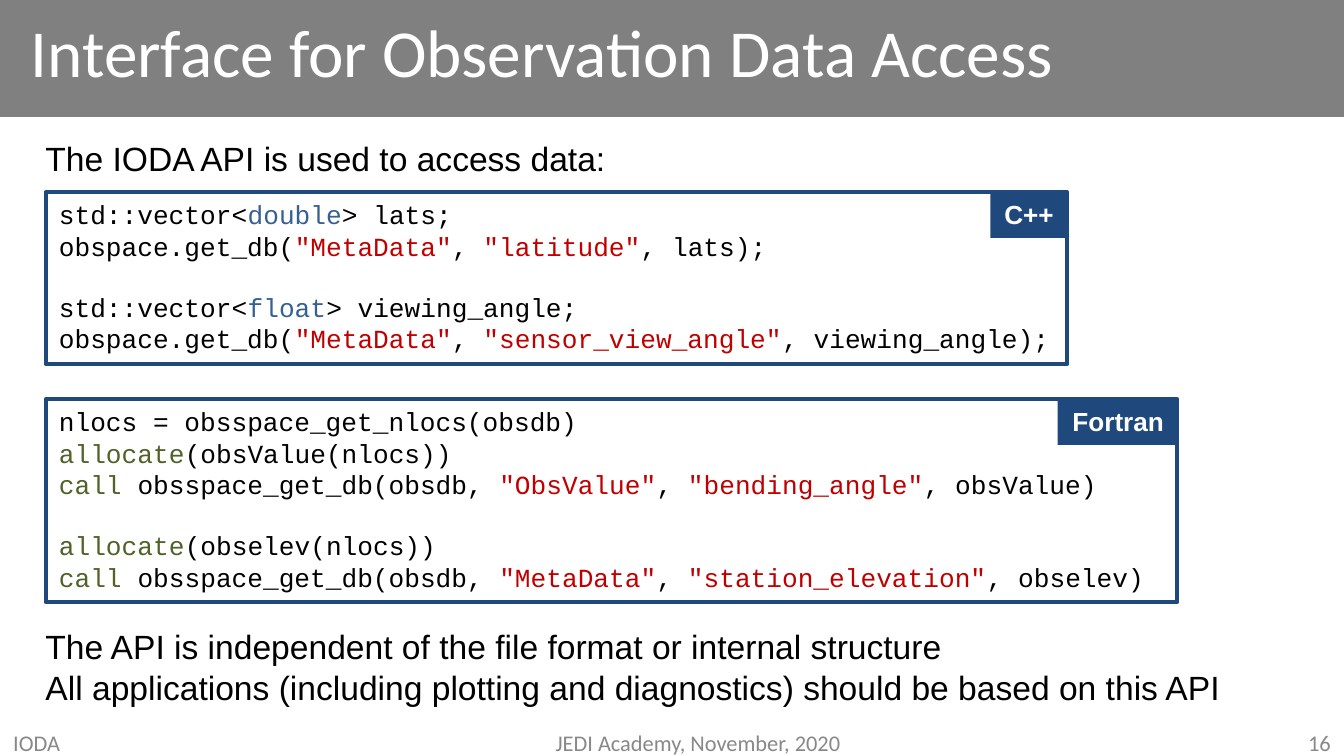
from pptx import Presentation
from pptx import util as u
from pptx.dml import color
from pptx.enum import shapes, text

# Grid of square cells, 100 columns across the slide; boxes are (column, row, columns, rows).
COLUMNS, ROWS = 100, 56.25
CELL = u.Inches(0.1)
NAVY, RED, BLUE, GREEN = "1F497D", "C00000", "376092", "4F6228"
BLACK, WHITE, BAND, MUTED = "000000", "FFFFFF", "808080", "888888"
CODE_SIZE = 14
CODE_LINE = 15.86  # height of one line of code, in points
LEFT, CENTER, RIGHT = text.PP_ALIGN.LEFT, text.PP_ALIGN.CENTER, text.PP_ALIGN.RIGHT

# In code, "|" separates the coloured pieces of a line.
CPP = [
    ['std::vector<|double|> lats;',
     'obspace.get_db(|"MetaData"|, |"latitude"|, lats);'],
    ['std::vector<|float|> viewing_angle;',
     'obspace.get_db(|"MetaData"|, |"sensor_view_angle"|, viewing_angle);'],
]
FORTRAN = [
    ['nlocs = obsspace_get_nlocs(obsdb)',
     'allocate|(obsValue(nlocs))',
     'call| obsspace_get_db(obsdb, |"ObsValue"|, |"bending_angle"|, obsValue)'],
    ['allocate|(obselev(nlocs))',
     'call| obsspace_get_db(obsdb, |"MetaData"|, |"station_elevation"|, obselev)'],
]
KEYWORDS = {"double": BLUE, "float": BLUE, "allocate": GREEN, "call": GREEN}


def rgb(value):
    return color.RGBColor.from_string(value)


def place(box):
    return [round(length * CELL) for length in box]


def add_rectangle(page, box, fill=None, line=None):
    shape = page.shapes.add_shape(shapes.MSO_SHAPE.RECTANGLE, *place(box))
    shape.shadow.inherit = False
    if fill:
        shape.fill.solid()
        shape.fill.fore_color.rgb = rgb(fill)
    else:
        shape.fill.background()
    if line:
        shape.line.color.rgb = rgb(line)
        shape.line.width = u.Pt(2.25)
    else:
        shape.line.fill.background()
    return shape


def set_font(para, name, size, value, bold=False):
    para.font.name, para.font.size, para.font.bold = name, u.Pt(size), bold
    para.font.color.rgb = rgb(value)


def write(shape, lines, name, size, value, align=LEFT, bold=False, wrap=False,
          anchor=text.MSO_ANCHOR.TOP):
    frame = shape.text_frame
    frame.word_wrap, frame.vertical_anchor = wrap, anchor
    for number, line in enumerate(lines):
        para = frame.add_paragraph() if number else frame.paragraphs[0]
        para.text, para.alignment = line, align
        set_font(para, name, size, value, bold)


def add_text(page, box, lines, *style, **options):
    write(page.shapes.add_textbox(*place(box)), lines, *style, **options)


def add_header(page, box, title):
    left, top, width, height = box
    add_rectangle(page, box, fill=BAND)
    add_text(page, (left + 1.3, top, width * 0.83, height - 1.2), [title],
             "Calibri", 36, WHITE, wrap=True, anchor=text.MSO_ANCHOR.MIDDLE)


def add_code(page, box, language, tag_width, groups):
    """Framed code in groups one line apart, with a language tag at top right."""
    left, top, width, height = box
    frame = add_rectangle(page, box, line=NAVY).text_frame
    frame.word_wrap, frame.vertical_anchor = False, text.MSO_ANCHOR.TOP
    para = None
    for group in groups:
        for number, line in enumerate(group):
            first = para is None
            para = frame.paragraphs[0] if first else frame.add_paragraph()
            para.alignment = LEFT
            if number == 0 and not first:
                para.space_before = u.Pt(CODE_LINE)
            set_font(para, "Courier New", CODE_SIZE, BLACK)
            for piece in line.split("|"):
                span = para.add_run()
                span.text = piece
                accent = RED if piece.startswith('"') else KEYWORDS.get(piece)
                if accent:
                    span.font.color.rgb = rgb(accent)
    tag = add_rectangle(page, (left + width - tag_width, top, tag_width, 3.4), fill=NAVY)
    write(tag, [language], "Arial", CODE_SIZE, WHITE, align=RIGHT, bold=True)


def add_footer(page, box, label, event, number):
    left, top, width, height = box
    side, middle = width * 0.233, width * 0.317
    parts = [(left, side, label, LEFT),
             (left + width * 0.361, middle, event, CENTER),
             (left + width - side, side, number, RIGHT)]
    for start, span, words, align in parts:
        add_text(page, (start, top, span, height), [words], "Calibri", 12, MUTED,
                 align=align, wrap=True, anchor=text.MSO_ANCHOR.MIDDLE)


def main():
    deck = Presentation()
    deck.slide_width, deck.slide_height = place((COLUMNS, ROWS))
    page = deck.slides.add_slide(deck.slide_layouts[6])
    add_header(page, (0, 0, COLUMNS, 8.7), "Interface for Observation Data Access")
    add_text(page, (2.4, 9.8, 44.4, 4), ["The IODA API is used to access data:"],
             "Arial", 18, BLACK)
    add_code(page, (3.4, 14.3, 76, 12.8), "C++", 5.7, CPP)
    add_code(page, (3.4, 29.7, 84.2, 15.1), "Fortran", 8.9, FORTRAN)
    add_text(page, (2.4, 46.1, 90.4, 7.1), [
        "The API is independent of the file format or internal structure",
        "All applications (including plotting and diagnostics) should be based on this API",
    ], "Arial", 18, BLACK)
    add_footer(page, (0, 54.2, COLUMNS, 2.1), "IODA", "JEDI Academy, November, 2020", "16")
    deck.save("out.pptx")


if __name__ == "__main__":
    main()
